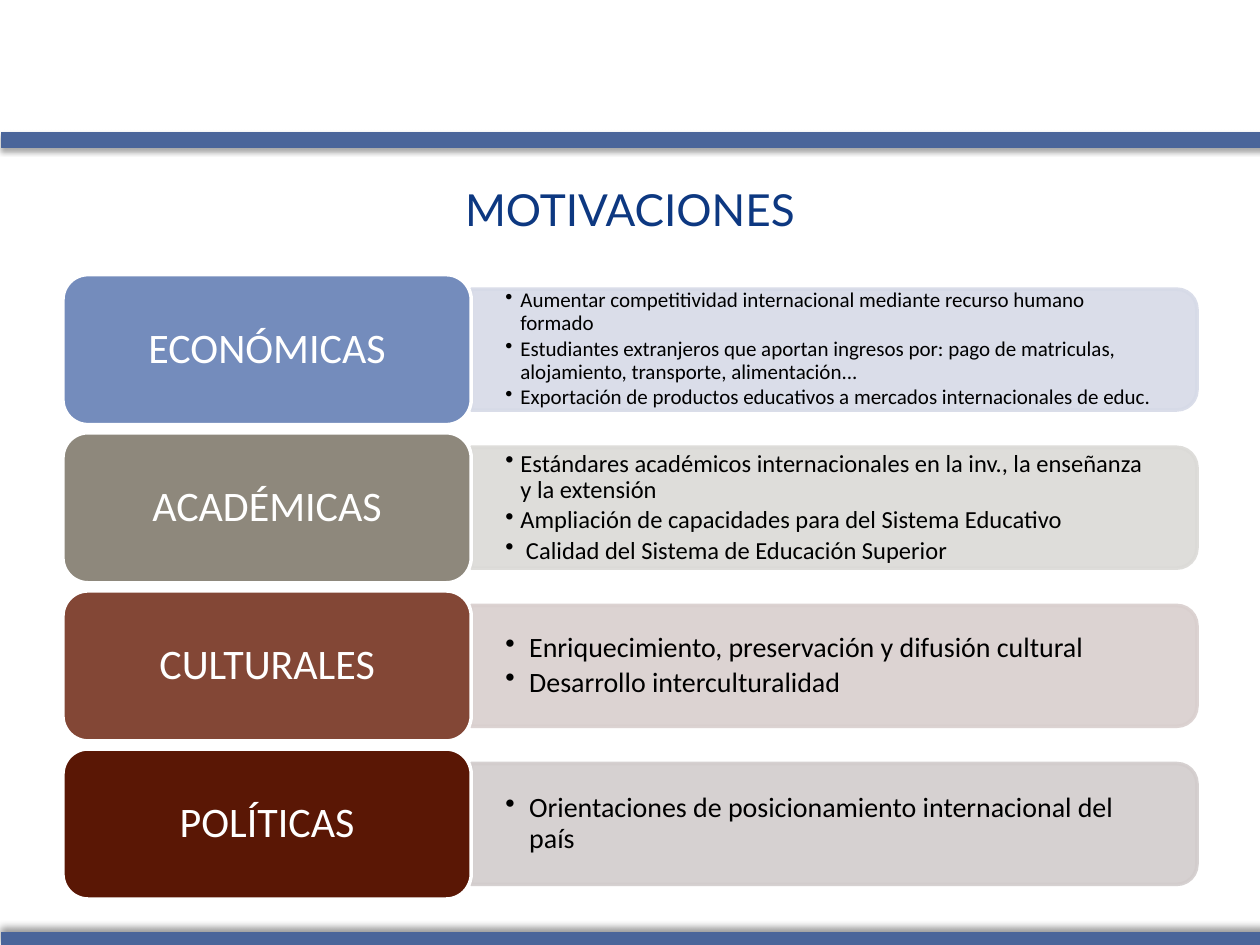
import pptx
import pptx.dml.color
import pptx.enum.shapes
import pptx.enum.text
import pptx.oxml
import pptx.oxml.ns
import pptx.util
from lxml import etree

RGBColor = pptx.dml.color.RGBColor
Shape = pptx.enum.shapes.MSO_SHAPE
Align = pptx.enum.text.PP_ALIGN
Anchor = pptx.enum.text.MSO_ANCHOR
Pt = pptx.util.Pt

WHITE = RGBColor(0xFF, 0xFF, 0xFF)
BLACK = RGBColor(0x00, 0x00, 0x00)
NAVY = RGBColor(0x0D, 0x38, 0x81)
BAR_BLUE = RGBColor(0x4A, 0x65, 0x9A)

# The slide is a grid of 100 columns by 75 rows.
COLUMNS, ROWS = 100, 75
LEFT, LABEL_WIDTH, LABEL_HEIGHT = 5, 32.4, 11.9
PANEL_WIDTH, PANEL_HEIGHT = 57.6, 9.6
FIRST_ROW, ROW_STEP = 21.8, 12.55
LABEL_INSET = 0.6

# Label, label colour, panel colour, text size, bullet indent in inches, items
MOTIVES = [
    ("ECONÓMICAS", RGBColor(0x74, 0x8C, 0xBC), RGBColor(0xD6, 0xDA, 0xE7), 12, 0.12, [
        "Aumentar competitividad internacional mediante recurso humano formado",
        "Estudiantes extranjeros que aportan ingresos por: pago de matriculas, "
        "alojamiento, transporte, alimentación...",
        "Exportación de productos educativos a mercados internacionales de educ."]),
    ("ACADÉMICAS", RGBColor(0x8E, 0x88, 0x7C), RGBColor(0xDB, 0xDA, 0xD7), 14, 0.12, [
        "Estándares académicos internacionales en la inv., la enseñanza y la extensión",
        "Ampliación de capacidades para del Sistema Educativo",
        " Calidad del Sistema de Educación Superior"]),
    ("CULTURALES", RGBColor(0x83, 0x47, 0x36), RGBColor(0xD9, 0xCF, 0xCE), 16, 0.19, [
        "Enriquecimiento, preservación y difusión cultural",
        "Desarrollo interculturalidad"]),
    ("POLÍTICAS", RGBColor(0x5A, 0x17, 0x05), RGBColor(0xD2, 0xCC, 0xCC), 16, 0.19, [
        "Orientaciones de posicionamiento internacional del país"]),
]


def set_attributes(target, values):
    for name, value in values.items():
        setattr(target, name, value)


class SlideBuilder:
    font_name = "Calibri"
    title_font_name = "Lato"

    def __init__(self, presentation):
        self.column = presentation.slide_width / COLUMNS
        self.row = presentation.slide_height / ROWS
        self.slide = presentation.slides.add_slide(presentation.slide_layouts[5])

    def box(self, left, top, width, height):
        """Turn grid columns and rows into slide lengths."""
        return [round(value * unit) for value, unit in
                zip((left, top, width, height), (self.column, self.row) * 2)]

    def shape(self, kind, area, fill, line, line_width):
        shape = self.slide.shapes.add_shape(kind, *self.box(*area))
        shape.shadow.inherit = False
        shape.fill.solid()
        shape.fill.fore_color.rgb = fill
        shape.line.color.rgb = line
        shape.line.width = Pt(line_width)
        return shape

    def bar(self, top, blur, distance, degrees, opacity):
        bar = self.shape(Shape.RECTANGLE, (0.1, top, 100.4, 1.2), BAR_BLUE, BAR_BLUE, 0.75)
        effects = bar._element.spPr.find(pptx.oxml.ns.qn("a:effectLst"))
        effects.append(pptx.oxml.parse_xml(
            f'<a:outerShdw {pptx.oxml.ns.nsdecls("a")} blurRad="{Pt(blur)}" '
            f'dist="{Pt(distance)}" dir="{degrees * 60000}" rotWithShape="0">'
            f'<a:srgbClr val="000000"><a:alpha val="{opacity * 1000}"/></a:srgbClr>'
            '</a:outerShdw>'))

    def title(self, text):
        title = self.slide.shapes.title
        set_attributes(title, dict(zip(("left", "top", "width", "height"),
                                       self.box(5, 14, 90, 5.2))))
        title.text_frame.vertical_anchor = Anchor.MIDDLE
        paragraph = title.text_frame.paragraphs[0]
        paragraph.text = text
        paragraph.alignment = Align.CENTER
        self.format_font(paragraph.runs[0], 25.2, NAVY, self.title_font_name)

    def format_font(self, run, size, color, name=None):
        set_attributes(run.font, {"size": Pt(size), "name": name or self.font_name})
        run.font.color.rgb = color

    def text(self, area, items, size, color, margins=(0.1, 0.05), indent=None):
        """Add a text box; an indent makes its paragraphs a bulleted list."""
        frame = self.slide.shapes.add_textbox(*self.box(*area)).text_frame
        side, end = (pptx.util.Inches(margin) for margin in margins)
        set_attributes(frame, {
            "word_wrap": True, "vertical_anchor": Anchor.MIDDLE,
            "margin_left": side, "margin_right": side,
            "margin_top": end, "margin_bottom": end})
        for number, item in enumerate(items):
            paragraph = frame.add_paragraph() if number else frame.paragraphs[0]
            if indent:
                self.bullet(paragraph, indent)
            set_attributes(paragraph, {
                "alignment": Align.LEFT if indent else Align.CENTER,
                "line_spacing": 0.9,
                "space_after": Pt(size * 0.15)})
            run = paragraph.add_run()
            run.text = item
            self.format_font(run, size, color)

    def bullet(self, paragraph, indent):
        paragraph.level = 1
        properties = paragraph._p.get_or_add_pPr()
        length = pptx.util.Inches(indent)
        properties.set("marL", str(length))
        properties.set("indent", str(-length))
        etree.SubElement(properties, pptx.oxml.ns.qn("a:buChar")).set("char", "•")

    def panel(self, left, top, color):
        """Add a panel that is turned so that its round corners face right."""
        offset = (PANEL_WIDTH - PANEL_HEIGHT) / 2
        panel = self.shape(Shape.ROUND_2_SAME_RECTANGLE,
                           (left + offset, top - offset, PANEL_HEIGHT, PANEL_WIDTH),
                           color, color, 2)
        panel.rotation = 90
        for element in panel._element.spPr.iter(pptx.oxml.ns.qn("a:srgbClr")):
            etree.SubElement(element, pptx.oxml.ns.qn("a:alpha")).set("val", "90000")

    def motive(self, top, label, label_color, panel_color, size, indent, items):
        panel_left = LEFT + LABEL_WIDTH
        panel_top = top + (LABEL_HEIGHT - PANEL_HEIGHT) / 2
        self.panel(panel_left, panel_top, panel_color)
        self.text((panel_left, panel_top + 0.5, PANEL_WIDTH - 0.5, PANEL_HEIGHT - 1),
                  items, size, BLACK, (0.27, 0.14), indent)
        self.shape(Shape.ROUNDED_RECTANGLE, (LEFT, top, LABEL_WIDTH, LABEL_HEIGHT),
                   label_color, WHITE, 2)
        self.text((LEFT + LABEL_INSET, top + LABEL_INSET,
                   LABEL_WIDTH - 2 * LABEL_INSET, LABEL_HEIGHT - 2 * LABEL_INSET),
                  [label], 24, WHITE)


def main():
    presentation = pptx.Presentation()
    presentation.slide_width = pptx.util.Inches(10)
    presentation.slide_height = pptx.util.Inches(7.5)
    builder = SlideBuilder(presentation)
    builder.bar(10.5, blur=3.1, distance=1.8, degrees=90, opacity=35)
    builder.bar(74, blur=4, distance=3, degrees=270, opacity=40)
    builder.title("MOTIVACIONES")
    for number, motive in enumerate(MOTIVES):
        builder.motive(FIRST_ROW + number * ROW_STEP, *motive)
    presentation.save("out.pptx")


if __name__ == "__main__":
    main()
